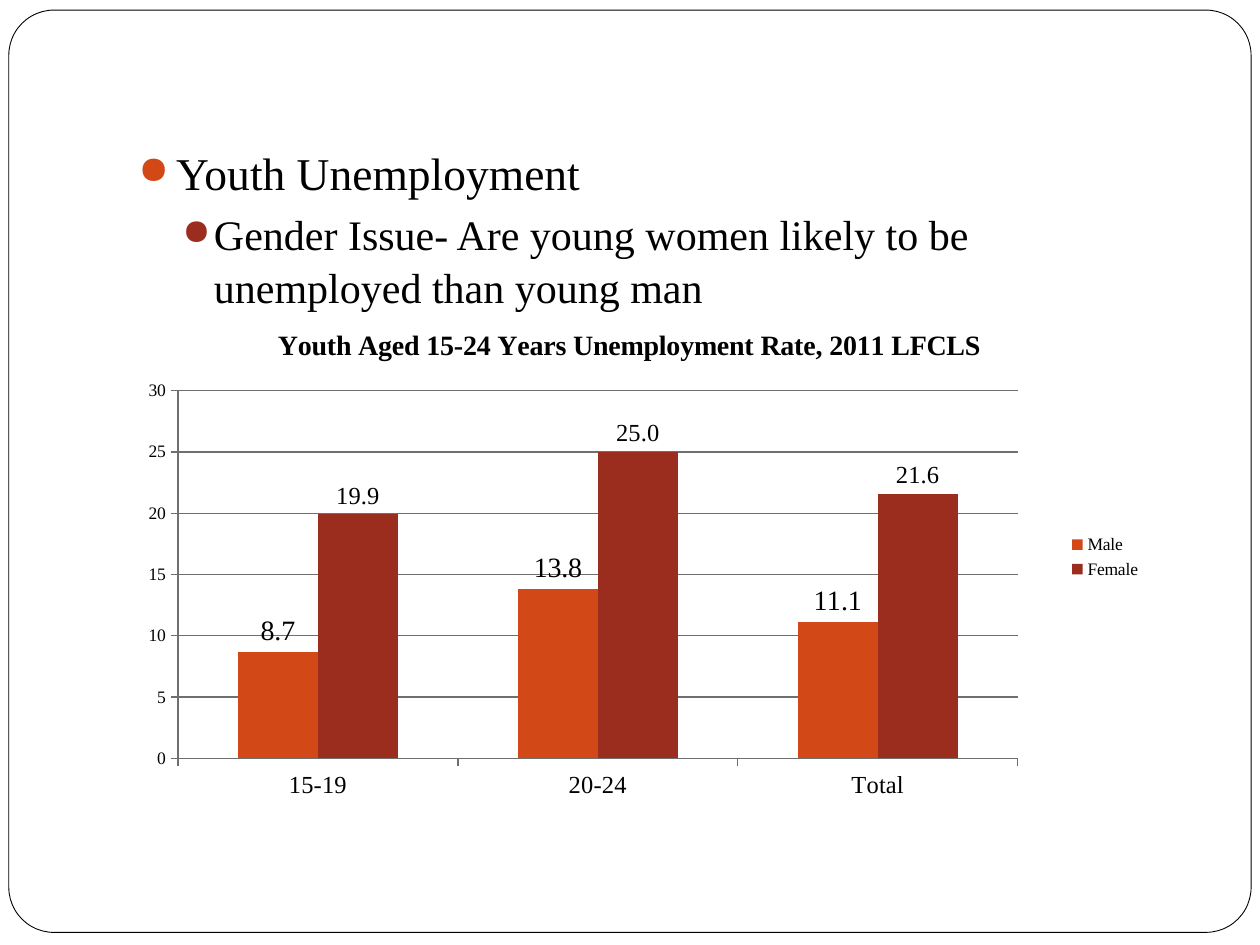
from lxml import etree
from pptx import Presentation
from pptx import util as u
from pptx.chart.data import CategoryChartData
from pptx.dml.color import RGBColor
from pptx.enum import chart as charts
from pptx.enum import shapes
from pptx.oxml import parse_xml
from pptx.oxml.ns import nsdecls, qn

COLOURS = {"paper": "FFFFFF", "ink": "000000", "grid": "6F6F6F",
           "male": "D34817", "female": "9B2D1F"}
FONT = "Times New Roman"
WIDTH, HEIGHT = u.Inches(10), u.Inches(7.5)


def colour(name):
    return RGBColor.from_string(COLOURS[name])


def add_bullet(para, content, size, bullet, left, hang, before):
    """Fill a paragraph with a bulleted line; left and hang are in inches."""
    para.space_before = u.Pt(before)
    para.line_spacing = 1.05
    span = para.add_run()
    span.text = content
    span.font.name, span.font.size = FONT, u.Pt(size)
    span.font.color.rgb = colour("ink")
    props = para._p.get_or_add_pPr()
    props.set("marL", str(u.Inches(left)))
    props.set("indent", str(-u.Inches(hang)))
    for xml in (f'<a:buClr {nsdecls("a")}><a:srgbClr val="{COLOURS[bullet]}"/></a:buClr>',
                f'<a:buSzPct {nsdecls("a")} val="85000"/>',
                f'<a:buChar {nsdecls("a")} char="●"/>'):
        props.append(parse_xml(xml))


deck = Presentation()
deck.slide_width, deck.slide_height = WIDTH, HEIGHT
page = deck.slides.add_slide(deck.slide_layouts[6])

# Rounded frame around the page
frame = page.shapes.add_shape(
    shapes.MSO_SHAPE.ROUNDED_RECTANGLE, u.Inches(0.07), u.Inches(0.08),
    u.Inches(9.86), u.Inches(7.32))
frame.adjustments[0] = 0.049
frame.shadow.inherit = False
frame.fill.solid()
frame.fill.fore_color.rgb = colour("paper")
frame.line.color.rgb = colour("ink")
frame.line.width = u.Pt(0.5)

# Bulleted statement
box = page.shapes.add_textbox(u.Inches(1), u.Inches(1.08), u.Inches(8.5), u.Inches(5.5))
box.text_frame.word_wrap = True
add_bullet(box.text_frame.paragraphs[0], "Youth Unemployment",
           size=26, bullet="male", left=0.3, hang=0.3, before=5.8)
question = box.text_frame.add_paragraph()
question.level = 1
add_bullet(question, "Gender Issue- Are young women likely to be unemployed than young man",
           size=24, bullet="female", left=0.6, hang=0.25, before=3.7)

# Unemployment rate by age group and gender
data = CategoryChartData()
data.categories = ["15-19", "20-24", "Total"]
data.add_series("Male", (8.7, 13.8, 11.1))
data.add_series("Female", (19.9, 25.0, 21.6))
chart = page.shapes.add_chart(
    charts.XL_CHART_TYPE.COLUMN_CLUSTERED, u.Inches(0.83), u.Inches(2.42),
    u.Inches(8.33), u.Inches(4), data).chart
chart.font.name, chart.font.size = FONT, u.Pt(10)
chart.font.color.rgb = colour("ink")

chart.has_title = True
title = chart.chart_title
title.include_in_layout = True
title.text_frame.text = "Youth Aged 15-24 Years Unemployment Rate, 2011 LFCLS"
heading = title.text_frame.paragraphs[0].runs[0].font
heading.name, heading.size, heading.bold = FONT, u.Pt(16), True
heading.color.rgb = colour("ink")

chart.has_legend = True
chart.legend.position = charts.XL_LEGEND_POSITION.RIGHT
chart.legend.include_in_layout = False

plot = chart.plots[0]
plot.gap_width, plot.overlap = 150, 0
plot.vary_by_categories = False
for series, name, size in zip(plot.series, ("male", "female"), (16, 14)):
    series.format.fill.solid()
    series.format.fill.fore_color.rgb = colour(name)
    labels = series.data_labels
    labels.show_value = True
    labels.position = charts.XL_LABEL_POSITION.OUTSIDE_END
    labels.number_format, labels.number_format_is_linked = "0.0", False
    labels.font.name, labels.font.size = FONT, u.Pt(size)
    labels.font.color.rgb = colour("ink")

rates, ages = chart.value_axis, chart.category_axis
rates.minimum_scale, rates.maximum_scale, rates.major_unit = 0, 30, 5
rates.has_major_gridlines = True
ages.tick_labels.font.size = u.Pt(14)
for axis in (rates, ages):
    axis.major_tick_mark = charts.XL_TICK_MARK.OUTSIDE
    axis.minor_tick_mark = charts.XL_TICK_MARK.NONE
for stroke in (rates.format.line, ages.format.line, rates.major_gridlines.format.line):
    stroke.color.rgb = colour("grid")
    stroke.width = u.Pt(0.75)

# Fixed inner plot area, as shares of the chart
area = chart._chartSpace.chart.plotArea
for old in area.findall(qn("c:layout")):
    area.remove(old)
layout = parse_xml(f'<c:layout {nsdecls("c")}><c:manualLayout/></c:layout>')
for tag, value in (("layoutTarget", "inner"), ("xMode", "edge"), ("yMode", "edge"),
                   ("x", 0.07), ("y", 0.17), ("w", 0.8), ("h", 0.73)):
    etree.SubElement(layout[0], qn(f"c:{tag}")).set("val", str(value))
area.insert(0, layout)

deck.save("out.pptx")
